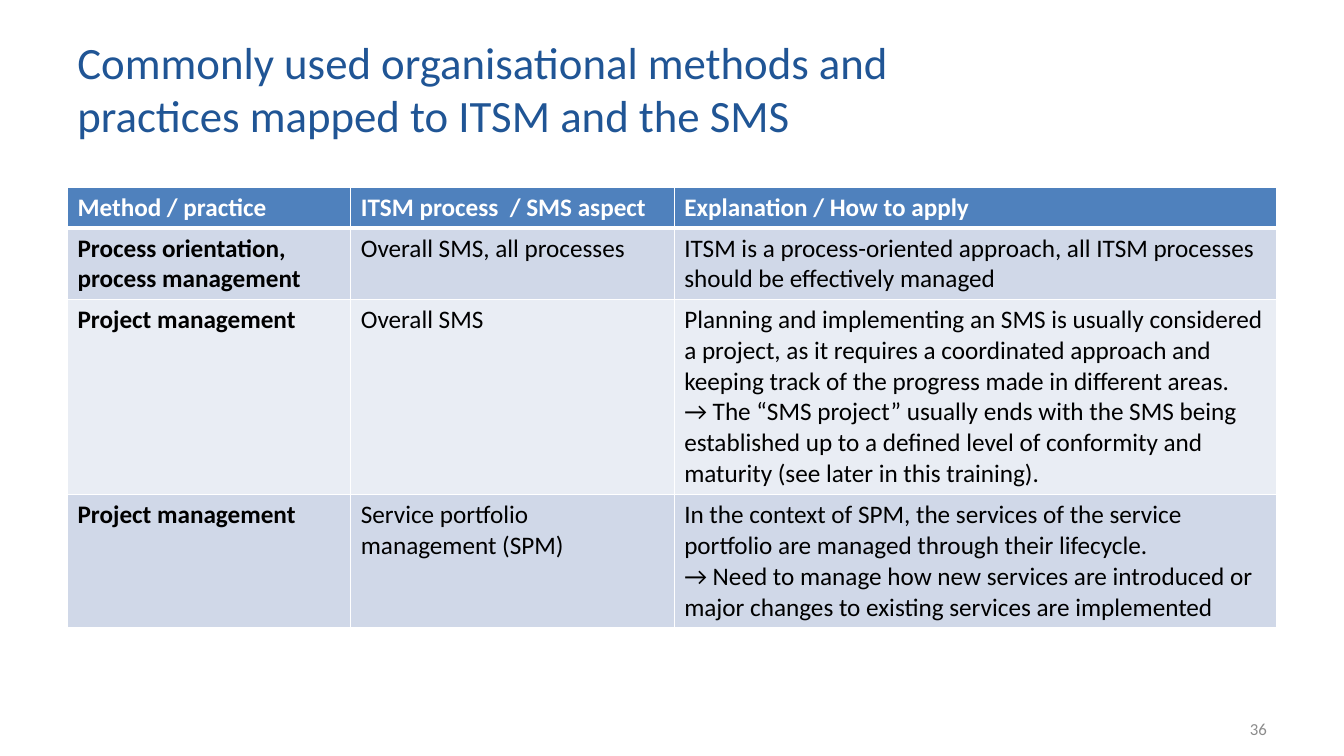
from lxml import etree
from pptx import Presentation
from pptx.dml.color import RGBColor
from pptx.enum.text import MSO_ANCHOR, PP_ALIGN
from pptx.oxml.ns import qn
from pptx.util import Cm, Pt

MIDDLE = MSO_ANCHOR.MIDDLE
LEFT, RIGHT = PP_ALIGN.LEFT, PP_ALIGN.RIGHT

WHITE = "FFFFFF"
HEADER_FILL = "4F81BD"
BAND_FILLS = ("D0D8E8", "E9EDF4")

TITLE_FORMAT = {"name": "Calibri", "size": Pt(32), "color": "205595"}
NUMBER_FORMAT = {"name": "Calibri", "size": Pt(12), "color": "8C8C8C"}
BODY_FORMAT = {"name": "Calibri", "size": Pt(18), "bold": False, "color": "000000"}
METHOD_FORMAT = {**BODY_FORMAT, "bold": True}
HEADER_FORMAT = {**METHOD_FORMAT, "color": WHITE}

COLUMN_WIDTHS = (7.14, 8.15, 15.19)
ROW_HEIGHTS = (1.03, 1.8, 4.92, 3.35)
ROWS = (
    ("Method / practice", "ITSM process  / SMS aspect", "Explanation / How to apply"),
    (
        "Process orientation, process management",
        "Overall SMS, all processes",
        "ITSM is a process-oriented approach, all ITSM processes should be "
        "effectively managed",
    ),
    (
        "Project management",
        "Overall SMS",
        "Planning and implementing an SMS is usually considered a project, as it "
        "requires a coordinated approach and keeping track of the progress made "
        "in different areas.\n"
        "→ The “SMS project” usually ends with the SMS being established up to a "
        "defined level of conformity and maturity (see later in this training).",
    ),
    (
        "Project management",
        "Service portfolio management (SPM)",
        "In the context of SPM, the services of the service portfolio are managed "
        "through their lifecycle.\n"
        "→ Need to manage how new services are introduced or major changes to "
        "existing services are implemented",
    ),
)


def rgb(value):
    return RGBColor.from_string(value)


def write_text(tf, text, text_format, align=LEFT):
    tf.word_wrap = True
    for i, line in enumerate(text.split("\n")):
        p = tf.paragraphs[0] if i == 0 else tf.add_paragraph()
        p.alignment = align
        r = p.add_run()
        r.text = line
        for key, value in text_format.items():
            if key == "color":
                r.font.color.rgb = rgb(value)
            else:
                setattr(r.font, key, value)


def add_text(s, box, text, text_format, align=LEFT):
    sp = s.shapes.add_textbox(*map(Cm, box))
    tf = sp.text_frame
    tf.vertical_anchor = MIDDLE
    write_text(tf, text, text_format, align)


def set_borders(cell, color, widths):
    tc_pr = cell._tc.get_or_add_tcPr()
    for side, width in widths.items():
        ln = etree.SubElement(tc_pr, qn(f"a:ln{side}"), w=str(Pt(width)))
        fill = etree.SubElement(ln, qn("a:solidFill"))
        etree.SubElement(fill, qn("a:srgbClr"), val=color)


def fill_cell(cell, text, row, column):
    set_borders(cell, WHITE, {
        "L": 1,
        "R": 1,
        "T": 3 if row == 1 else 1,
        "B": 3 if row == 0 else 1,
    })
    cell.fill.solid()
    if row == 0:
        fill, text_format = HEADER_FILL, HEADER_FORMAT
    else:
        fill = BAND_FILLS[(row - 1) % 2]
        text_format = METHOD_FORMAT if column == 0 else BODY_FORMAT
    cell.fill.fore_color.rgb = rgb(fill)
    write_text(cell.text_frame, text, text_format)


def add_methods_table(s, left, top):
    size = (Cm(sum(COLUMN_WIDTHS)), Cm(sum(ROW_HEIGHTS)))
    table = s.shapes.add_table(
        len(ROWS), len(COLUMN_WIDTHS), Cm(left), Cm(top), *size
    ).table
    for column, width in zip(table.columns, COLUMN_WIDTHS):
        column.width = Cm(width)
    for row, height in zip(table.rows, ROW_HEIGHTS):
        row.height = Cm(height)
    for i, texts in enumerate(ROWS):
        for j, text in enumerate(texts):
            fill_cell(table.cell(i, j), text, i, j)


def main():
    prs = Presentation()
    prs.slide_width, prs.slide_height = Cm(33.87), Cm(19.05)
    s = prs.slides.add_slide(prs.slide_layouts[6])
    add_text(
        s,
        (1.7, 0.76, 25.17, 2.92),
        "Commonly used organisational methods and practices mapped to ITSM and the SMS",
        TITLE_FORMAT,
    )
    add_methods_table(s, 1.7, 4.72)
    add_text(s, (24.28, 17.86, 7.9, 1.02), "36", NUMBER_FORMAT, RIGHT)
    prs.save("out.pptx")


if __name__ == "__main__":
    main()
